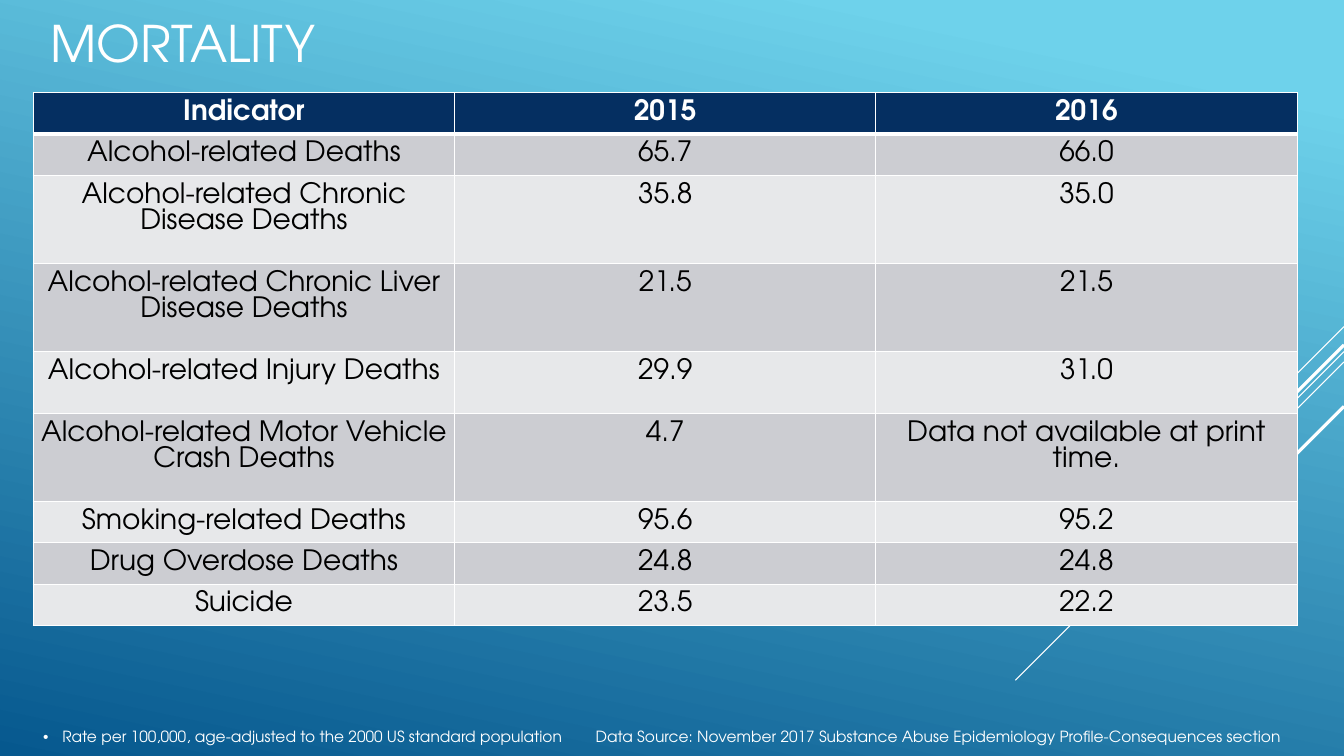
from lxml import etree
from pptx import Presentation
from pptx.dml.color import RGBColor
from pptx.enum.shapes import MSO_CONNECTOR
from pptx.enum.text import MSO_ANCHOR, PP_ALIGN
from pptx.oxml.ns import qn
from pptx.util import Cm, Pt

STRAIGHT = MSO_CONNECTOR.STRAIGHT
CENTER = PP_ALIGN.CENTER
TOP, MIDDLE = MSO_ANCHOR.TOP, MSO_ANCHOR.MIDDLE

FONT = "TeX Gyre Adventor"
COLORS = {"sky": "6ED2EB", "deep": "06588E", "white": "FFFFFF", "black": "000000",
          "header": "052F61", "odd": "CCCDD2", "even": "E7E8EA"}

TITLE = "MORTALITY"
HEADER = ("Indicator", "2015", "2016")
# Row height in cm, then the cells
DEATH_RATES = [
    (1.04, "Alcohol-related Deaths", "65.7", "66.0"),
    (2.22, "Alcohol-related Chronic Disease Deaths", "35.8", "35.0"),
    (2.22, "Alcohol-related Chronic Liver Disease Deaths", "21.5", "21.5"),
    (1.56, "Alcohol-related Injury Deaths", "29.9", "31.0"),
    (2.22, "Alcohol-related Motor Vehicle Crash Deaths", "4.7",
     "Data not available at print time."),
    (1.04, "Smoking-related Deaths", "95.6", "95.2"),
    (1.04, "Drug Overdose Deaths", "24.8", "24.8"),
    (1.04, "Suicide", "23.5", "22.2"),
]
FOOTNOTE = ("Rate per 100,000, age-adjusted to the 2000 US standard population",
            "Data Source: November 2017 Substance Abuse Epidemiology "
            "Profile-Consequences section")

SLIDE_W, SLIDE_H = 33.87, 19.05
TABLE_LEFT, TABLE_TOP, TABLE_W = 0.84, 2.34, 31.85
# Diagonals from the right edge: top, run to the lower left (cm), weight (pt)
RAYS = [(8.23, 2.54, 0.75), (8.86, 8.28, 0.75), (9.12, 5.26, 0.75),
        (8.69, 4.85, 2.25), (10.24, 3.53, 2.25)]


def rgb(name):
    return RGBColor.from_string(COLORS[name])


def write(p, text, size, color, bold=False):
    r = p.add_run()
    r.text = text
    formats = {"name": FONT, "size": Pt(size), "bold": bold}
    for key, value in formats.items():
        setattr(r.font, key, value)
    r.font.color.rgb = rgb(color)


def add_text_box(s, left, top, width, height):
    tf = s.shapes.add_textbox(Cm(left), Cm(top), Cm(width), Cm(height)).text_frame
    tf.word_wrap = True
    return tf


def paint_background(s):
    fill = s.background.fill
    fill.gradient()
    fill.gradient_angle = 258
    for stop, position, color in zip(fill.gradient_stops, (0.1, 1), ("sky", "deep")):
        stop.position = position
        stop.color.rgb = rgb(color)


def add_ray(s, top, run, weight):
    line = s.shapes.add_connector(STRAIGHT, Cm(SLIDE_W), Cm(top),
                                  Cm(SLIDE_W - run), Cm(top + run))
    line.line.color.rgb = rgb("white")
    line.line.width = Pt(weight)
    etree.SubElement(line.element.spPr, qn("a:effectLst"))


def set_borders(cell, weights):
    """Draw white borders; weights are points for left, right, top, bottom."""
    tcPr = cell._tc.get_or_add_tcPr()
    for i, (side, weight) in enumerate(zip("LRTB", weights)):
        ln = etree.Element(qn(f"a:ln{side}"), w=str(Pt(weight)))
        fill = etree.SubElement(ln, qn("a:solidFill"))
        etree.SubElement(fill, qn("a:srgbClr"), val=COLORS["white"])
        tcPr.insert(i, ln)


def add_rate_table(s):
    rows = [(1.04, *HEADER)] + DEATH_RATES
    total = sum(row[0] for row in rows)
    table = s.shapes.add_table(len(rows), len(HEADER), Cm(TABLE_LEFT), Cm(TABLE_TOP),
                               Cm(TABLE_W), Cm(total)).table
    for column in table.columns:
        column.width = Cm(TABLE_W / len(HEADER))
    for i, (height, *texts) in enumerate(rows):
        table.rows[i].height = Cm(height)
        is_header = i == 0
        band = "header" if is_header else ("even", "odd")[i % 2]
        borders = (1, 1, 3 if i == 1 else 1, 3 if is_header else 1)
        for j, text in enumerate(texts):
            cell = table.cell(i, j)
            cell.fill.solid()
            cell.fill.fore_color.rgb = rgb(band)
            formats = {"margin_left": Cm(0.19), "margin_right": Cm(0.19),
                       "margin_top": Cm(0.18), "margin_bottom": Cm(0),
                       "vertical_anchor": TOP}
            for key, value in formats.items():
                setattr(cell, key, value)
            p = cell.text_frame.paragraphs[0]
            p.alignment = CENTER
            p.line_spacing = Pt(18.6)
            write(p, text, 20, "white" if is_header else "black", is_header)
            set_borders(cell, borders)


def add_footnote(s):
    p = add_text_box(s, TABLE_LEFT, 18.21, TABLE_W, 0.74).paragraphs[0]
    pPr = p._p.get_or_add_pPr()
    pPr.set("marL", str(Cm(0.48)))
    pPr.set("indent", str(Cm(-0.48)))
    etree.SubElement(pPr, qn("a:buFont"), typeface="Arial")
    etree.SubElement(pPr, qn("a:buChar"), char="•")
    tabs = etree.SubElement(pPr, qn("a:tabLst"))
    etree.SubElement(tabs, qn("a:tab"), pos=str(Cm(13.92)), algn="l")
    write(p, "\t".join(FOOTNOTE), 11, "white")


def main():
    prs = Presentation()
    prs.slide_width, prs.slide_height = Cm(SLIDE_W), Cm(SLIDE_H)
    s = prs.slides.add_slide(prs.slide_layouts[6])
    paint_background(s)
    for ray in RAYS:
        add_ray(s, *ray)
    tf = add_text_box(s, 1.02, 0.3, 12.07, 1.55)
    tf.vertical_anchor = MIDDLE
    write(tf.paragraphs[0], TITLE, 36, "white")
    add_rate_table(s)
    add_footnote(s)
    prs.save("out.pptx")


if __name__ == "__main__":
    main()
